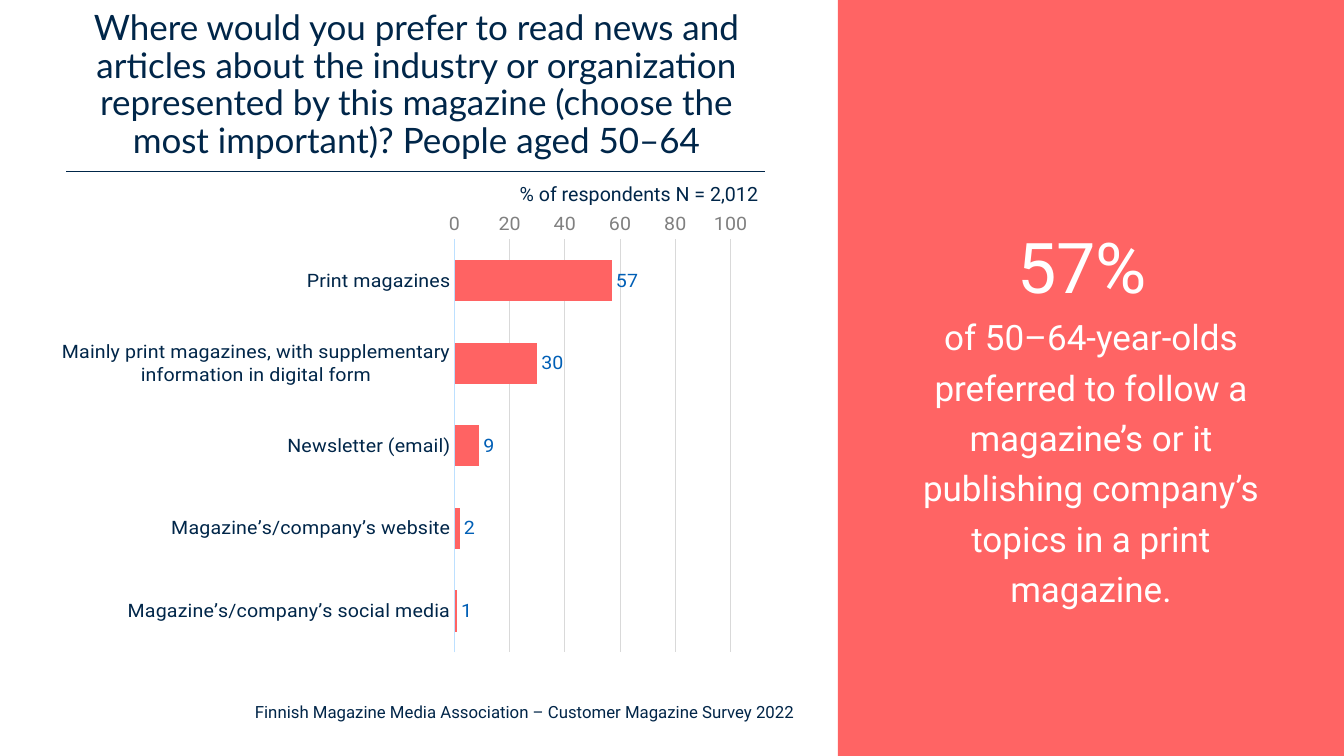
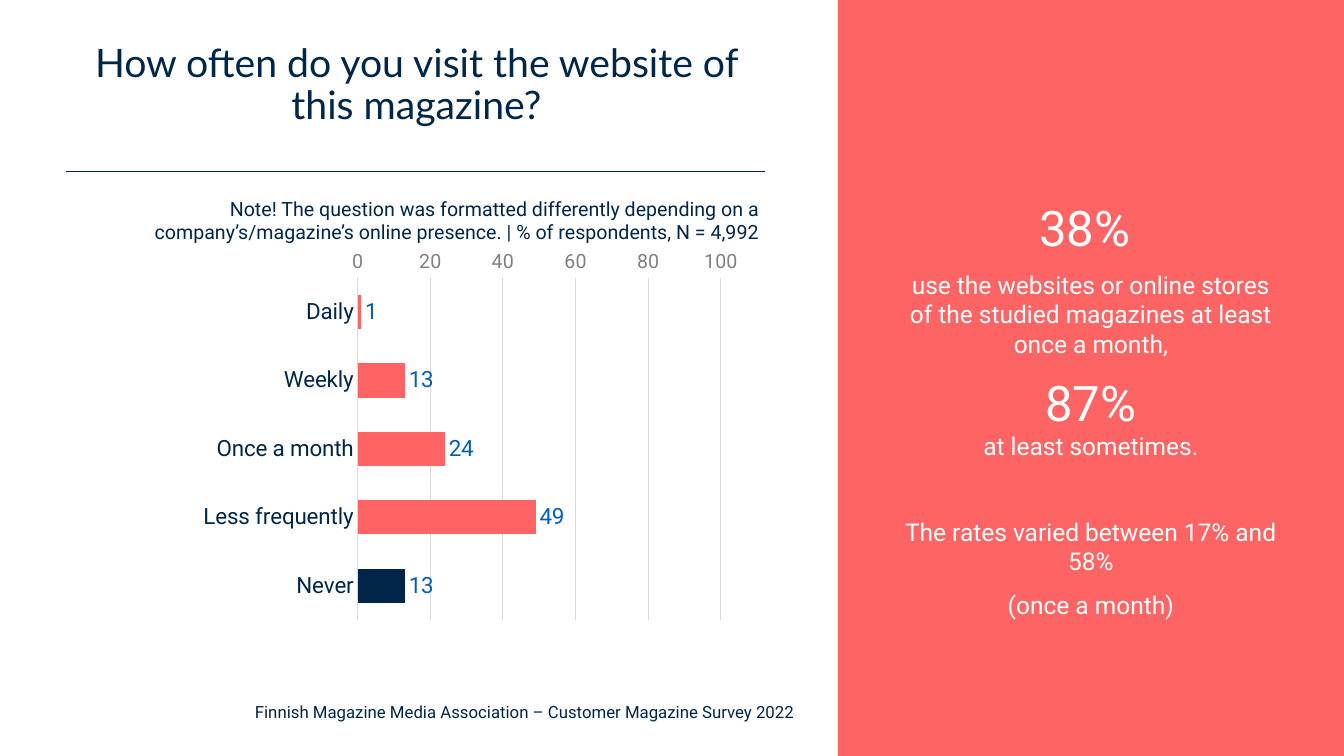
from lxml import etree
from pptx import Presentation
from pptx.chart.data import CategoryChartData
from pptx.dml.color import RGBColor
from pptx.enum.chart import XL_AXIS_CROSSES, XL_CHART_TYPE, XL_LABEL_POSITION, XL_TICK_MARK
from pptx.enum.shapes import MSO_CONNECTOR, MSO_SHAPE
from pptx.enum.text import MSO_ANCHOR, PP_ALIGN
from pptx.oxml.ns import qn
from pptx.util import Inches, Pt

BAR_CHART = XL_CHART_TYPE.BAR_CLUSTERED
OUTSIDE_END = XL_LABEL_POSITION.OUTSIDE_END
NO_TICK = XL_TICK_MARK.NONE
CROSS_AT_MAXIMUM = XL_AXIS_CROSSES.MAXIMUM
STRAIGHT = MSO_CONNECTOR.STRAIGHT
RECTANGLE = MSO_SHAPE.RECTANGLE
TOP, MIDDLE = MSO_ANCHOR.TOP, MSO_ANCHOR.MIDDLE
CENTER, RIGHT = PP_ALIGN.CENTER, PP_ALIGN.RIGHT

SLIDE_WIDTH, SLIDE_HEIGHT = Inches(13.33), Inches(7.5)
NAVY, DEEP_NAVY, CORAL, BAR_CORAL = "002649", "002548", "FF6464", "FF6363"
WHITE, BLUE, PALE_BLUE, GRAY, LIGHT_GRAY = "FFFFFF", "005FB6", "BDE0FF", "808080", "D9D9D9"
TITLE_FONT, BODY_FONT, CHART_FONT = "Lato", "Roboto", "Calibri"

PANEL_LEFT = 62.34
RULE_LEFT, RULE_RIGHT, RULE_TOP = 4.95, 56.94, 22.67
TITLE_AREA = (RULE_LEFT, 0, 52.06, RULE_TOP)
FOOTER_AREA = (15.75, 93.2, 46.59, 2.13)
MESSAGE_AREA = (66.17, 23.6, 30, 60.8)
FOOTER = "Finnish Magazine Media Association – Customer Magazine Survey 2022"


def color(value):
    """Turn a hex string into a colour."""
    return RGBColor.from_string(value)


def across(share):
    """Return a percentage of the slide's width."""
    return int(SLIDE_WIDTH * share / 100)


def down(share):
    """Return a percentage of the slide's height."""
    return int(SLIDE_HEIGHT * share / 100)


def place(area):
    """Convert left, top, width and height percentages to lengths."""
    left, top, width, height = area
    return across(left), down(top), across(width), down(height)


def style_font(font, name, size, ink):
    """Set a font's name, size and colour."""
    font.name, font.size = name, Pt(size)
    font.color.rgb = color(ink)


def style_line(line, ink, width):
    """Set a line's colour and width."""
    line.color.rgb = color(ink)
    line.width = Pt(width)


def add_text(slide, area, paragraphs, font=BODY_FONT, ink=NAVY, align=CENTER,
             anchor=MIDDLE, spacing=1.0):
    """Add paragraphs, each a space before and its lines of text and size."""
    frame = slide.shapes.add_textbox(*place(area)).text_frame
    frame.word_wrap = True
    frame.vertical_anchor = anchor
    for index, (before, lines) in enumerate(paragraphs):
        paragraph = frame.paragraphs[0] if index == 0 else frame.add_paragraph()
        paragraph.alignment = align
        paragraph.line_spacing = spacing
        paragraph.space_before = Pt(before)
        for number, (text, size) in enumerate(lines):
            if number:
                paragraph.add_line_break()
            run = paragraph.add_run()
            run.text = text
            style_font(run.font, font, size, ink)


def add_frame(slide):
    """Add the side panel, title rule and footer."""
    panel = slide.shapes.add_shape(
        RECTANGLE, *place((PANEL_LEFT, 0, 100 - PANEL_LEFT, 100)))
    panel.shadow.inherit = False
    panel.fill.solid()
    panel.fill.fore_color.rgb = color(CORAL)
    panel.line.fill.background()
    rule = slide.shapes.add_connector(
        STRAIGHT, across(RULE_LEFT), down(RULE_TOP), across(RULE_RIGHT), down(RULE_TOP))
    style_line(rule.line, NAVY, 1)
    etree.SubElement(rule.element.spPr, qn("a:effectLst"))
    add_text(slide, FOOTER_AREA, [(0, [(FOOTER, 12)])], ink=DEEP_NAVY, spacing=0.9)


def set_plot_area(chart, shares):
    """Fix the inner plot area as shares of the chart."""
    plot_area = chart.element.find(".//" + qn("c:plotArea"))
    layout = plot_area.find(qn("c:layout"))
    if layout is None:
        layout = etree.Element(qn("c:layout"))
        plot_area.insert(0, layout)
    manual = etree.SubElement(layout, qn("c:manualLayout"))
    settings = [("layoutTarget", "inner"), ("xMode", "edge"), ("yMode", "edge")]
    settings += zip("xywh", shares)
    for tag, value in settings:
        etree.SubElement(manual, qn("c:" + tag)).set("val", str(value))


def add_bar_chart(slide, area, values, plot_shares, size, accents=()):
    """Add a bar chart of percentages with its accented bars in navy."""
    data = CategoryChartData()
    data.categories = list(values)
    data.add_series("Series 1", list(values.values()))
    chart = slide.shapes.add_chart(BAR_CHART, *place(area), data).chart
    chart.has_legend = chart.has_title = False
    style_font(chart.font, CHART_FONT, 10, NAVY)
    set_plot_area(chart, plot_shares)

    categories = chart.category_axis
    categories.reverse_order = True
    categories.crosses = CROSS_AT_MAXIMUM
    categories.has_major_gridlines = False
    style_font(categories.tick_labels.font, BODY_FONT, size, NAVY)
    style_line(categories.format.line, PALE_BLUE, 0.75)

    scale = chart.value_axis
    scale.minimum_scale, scale.maximum_scale, scale.major_unit = 0, 100, 20
    scale.has_major_gridlines = True
    style_line(scale.major_gridlines.format.line, LIGHT_GRAY, 0.75)
    style_font(scale.tick_labels.font, BODY_FONT, 14, GRAY)
    scale.format.line.fill.background()
    for axis in (categories, scale):
        axis.major_tick_mark = axis.minor_tick_mark = NO_TICK

    plot = chart.plots[0]
    plot.gap_width = 100
    plot.vary_by_categories = False
    series = plot.series[0]
    series.format.fill.solid()
    series.format.fill.fore_color.rgb = color(BAR_CORAL)
    for index, category in enumerate(values):
        if category in accents:
            fill = series.points[index].format.fill
            fill.solid()
            fill.fore_color.rgb = color(DEEP_NAVY)
    labels = series.data_labels
    labels.show_value = True
    labels.position = OUTSIDE_END
    labels.number_format, labels.number_format_is_linked = "#,##0", False
    style_font(labels.font, BODY_FONT, size, BLUE)


def add_survey_slide(presentation, title, title_size, note, note_area, message,
                     message_spacing, chart):
    """Add a slide with a question, its chart and the main finding."""
    slide = presentation.slides.add_slide(presentation.slide_layouts[6])
    add_frame(slide)
    add_bar_chart(slide, **chart)
    add_text(slide, TITLE_AREA, [(0, [(title, title_size)])], font=TITLE_FONT, spacing=0.9)
    add_text(slide, note_area, [(0, [(note, 14)])], align=RIGHT, anchor=TOP)
    add_text(slide, MESSAGE_AREA, message, ink=WHITE, spacing=message_spacing)


def main():
    """Build and save the presentation."""
    presentation = Presentation()
    presentation.slide_width, presentation.slide_height = SLIDE_WIDTH, SLIDE_HEIGHT
    add_survey_slide(
        presentation,
        title="Where would you prefer to read news and articles about the industry or "
              "organization represented by this magazine (choose the most important)? "
              "People aged 50–64",
        title_size=25,
        note="% of respondents N = 2,012",
        note_area=(25.81, 23.47, 31.36, 4.53),
        message=[(0, [("57% ", 50),
                      ("of 50–64-year-olds preferred to follow a magazine’s or it "
                       "publishing company’s topics in a print magazine.", 25)])],
        message_spacing=1.2,
        chart=dict(
            area=(-1.28, 28.13, 58.21, 64.53),
            values={
                "Print magazines": 57,
                "Mainly print magazines, with supplementary information in digital form": 30,
                "Newsletter (email)": 9,
                "Magazine’s/company’s website": 2,
                "Magazine’s/company’s social media": 1,
            },
            plot_shares=(0.603, 0, 0.353, 0.896),
            size=14,
        ),
    )
    add_survey_slide(
        presentation,
        title="How often do you visit the website of this magazine?",
        title_size=28,
        note="Note! The question was formatted differently depending on a "
             "company’s/magazine’s online presence. | % of respondents, N = 4,992",
        note_area=(5.18, 25.33, 52.06, 7.6),
        message=[
            (0, [("38% ", 35)]),
            (10, [("use the websites or online stores of the studied magazines "
                   "at least once a month,", 17.5)]),
            (10, [("87%", 35), ("at least sometimes.", 17.5)]),
            (40.5, [("The rates varied between 17% and 58%", 17.5)]),
            (10, [("(once a month)", 17.5)]),
        ],
        message_spacing=1.0,
        chart=dict(
            area=(-5.33, 32.93, 62.27, 58.8),
            values={"Daily": 1, "Weekly": 13, "Once a month": 24,
                    "Less frequently": 49, "Never": 13},
            plot_shares=(0.513, 0.065, 0.434, 0.77),
            size=16,
            accents=("Never",),
        ),
    )
    presentation.save("out.pptx")


if __name__ == "__main__":
    main()
